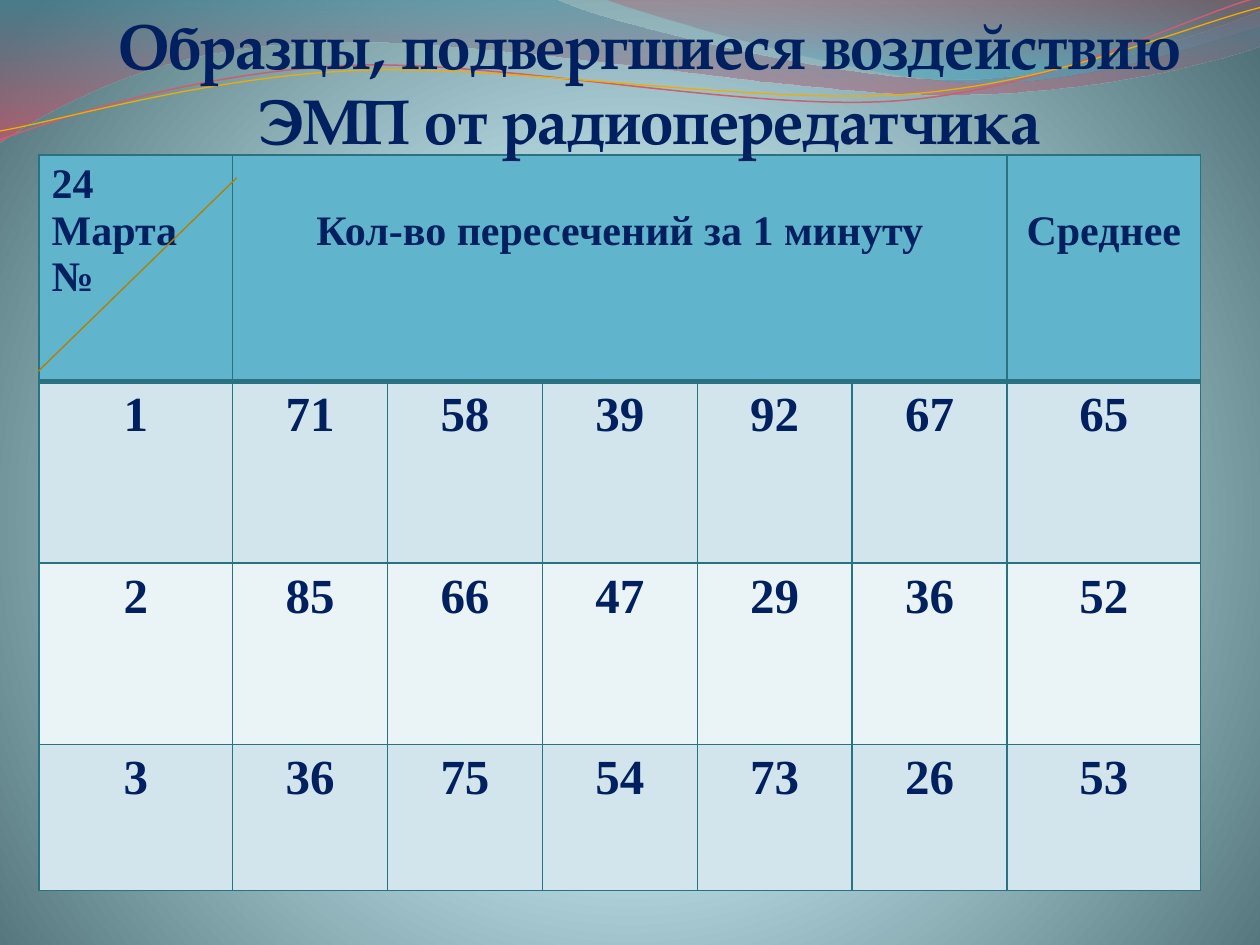
from dataclasses import dataclass

from lxml import etree
from pptx import Presentation
from pptx.dml.color import RGBColor
from pptx.enum.shapes import MSO_CONNECTOR
from pptx.enum.text import MSO_ANCHOR, MSO_AUTO_SIZE, PP_ALIGN
from pptx.oxml import parse_xml
from pptx.oxml.ns import nsdecls, qn
from pptx.util import Emu, Inches, Pt

CENTER, LEFT = PP_ALIGN.CENTER, PP_ALIGN.LEFT
TOP = MSO_ANCHOR.TOP
FIT_SHAPE = MSO_AUTO_SIZE.SHAPE_TO_FIT_TEXT
STRAIGHT = MSO_CONNECTOR.STRAIGHT


@dataclass(frozen=True)
class Theme:
    ink: str = "002060"
    outline: str = "3EB9DA"
    head: str = "60B5CC"
    bands: tuple = ("D2E5EC", "EAF3F6")
    border: str = "287281"
    diagonal: str = "B28000"
    title_font: str = "TeX Gyre Pagella"
    table_font: str = "Times New Roman"
    title_pt: int = 36
    head_pt: int = 24
    body_pt: int = 28


T = Theme()

# Content
TITLE = "Образцы, подвергшиеся воздействию ЭМП от радиопередатчика"
CORNER = ["24", "Марта", "№"]
COUNT_HEAD = "Кол-во пересечений за 1 минуту"
MEAN_HEAD = "Среднее"
SAMPLES = [
    (1, 71, 58, 39, 92, 67, 65),
    (2, 85, 66, 47, 29, 36, 52),
    (3, 36, 75, 54, 73, 26, 53),
]

# Table grid: columns are shares of the width, rows are inches
TABLE_LEFT, TABLE_TOP, TABLE_W = 0.31, 1.23, 9.22
COL_SHARES = (5, 4, 4, 4, 4, 4, 5)
ROW_HEIGHTS = (1.8, 1.44, 1.44, 1.16)
HEAD_DROP = 0.42

# Gradients: (position %, colour, opacity %)
BACKDROP = [(0, "D5F7FF", 100), (25, "D3F7FF", 100), (100, "507178", 100)]
RADIAL = ('<a:path path="circle"><a:fillToRect l="10000" t="110000" '
          'r="10000" b="100000"/></a:path>')
DOWNWARD = '<a:lin ang="5400000" scaled="0"/>'

# Waves: a pair is a straight step, six numbers are a Bezier step
WAVE_BANDS = [
    ([(0, -0.01), (4.4, -0.01), (4.76, 0.17, 6.64, 0.63, 7.58, 0.63),
      (8.53, 0.63, 9.58, 0.26, 10, 0.09), (10.01, 0.36),
      (9.83, 0.44, 8.7, 0.76, 7.46, 0.75), (6.22, 0.75, 3.82, 0.28, 2.57, 0.34),
      (1.29, 0.35, 0.46, 0.83, -0.01, 1.13)],
     [(0, "3F8A9F", 45), (100, "EF445B", 55)]),
    ([(4.79, -0.01), (5.09, 0.11, 6.82, 0.62, 7.69, 0.65),
      (8.56, 0.69, 9.61, 0.32, 10, 0.21), (10, 0)],
     [(0, "B84253", 30), (80, "42ABC7", 45)]),
]
WAVE_LINES = [
    ([(0, 1.11), (0.48, 0.93, 1.58, 0.57, 2.77, 0.52),
      (3.95, 0.47, 5.93, 0.89, 7.13, 0.8), (8.33, 0.71, 9.38, 0.15, 9.98, -0.02)],
     "CB5F6E", 0.85),
    ([(0, 1.04), (0.47, 0.96, 1.64, 0.61, 2.83, 0.56),
      (4.03, 0.51, 5.97, 0.83, 7.17, 0.75), (8.36, 0.67, 9.41, 0.21, 10, 0.06)],
     "F0AD00", 0.75),
]
UNITS = 100  # path units to the inch


def rgb(value):
    return RGBColor.from_string(value)


def set_gradient(fill, parent, stops, direction):
    fill.gradient()
    old = next(parent.iter(qn("a:gradFill")))
    marks = "".join(
        f'<a:gs pos="{pos * 1000}"><a:srgbClr val="{color}">'
        f'<a:alpha val="{alpha * 1000}"/></a:srgbClr></a:gs>'
        for pos, color, alpha in stops)
    old.getparent().replace(old, parse_xml(
        f'<a:gradFill {nsdecls("a")} rotWithShape="1">'
        f'<a:gsLst>{marks}</a:gsLst>{direction}</a:gradFill>'))


def add_wave(slide, steps, close):
    points = [(round(step[i] * UNITS), round(step[i + 1] * UNITS))
              for step in steps for i in range(0, len(step), 2)]
    builder = slide.shapes.build_freeform(*points[0], scale=Inches(1) / UNITS)
    builder.add_line_segments(points[1:], close=close)
    sp = builder.convert_to_shape()
    sp.shadow.inherit = False

    # Join the three points of each Bezier step into one curve
    segments = iter(list(sp._element.iter(qn("a:lnTo"))))
    for step in steps[1:]:
        group = [next(segments) for _ in range(len(step) // 2)]
        if len(group) == 3:
            curve = etree.Element(qn("a:cubicBezTo"))
            group[0].addprevious(curve)
            for segment in group:
                curve.append(segment[0])
                segment.getparent().remove(segment)
    return sp


def line_xml(tag, color, width):
    return parse_xml(
        f'<a:{tag} {nsdecls("a")} w="{Pt(width)}"><a:solidFill>'
        f'<a:srgbClr val="{color}"/></a:solidFill></a:{tag}>')


def write(tf, lines, align, font):
    for i, line in enumerate(lines):
        p = tf.paragraphs[0] if i == 0 else tf.add_paragraph()
        p.alignment = align
        r = p.add_run()
        r.text = str(line)
        for name, value in font.items():
            setattr(r.font, name, value)
        r.font.color.rgb = rgb(T.ink)


def fill_cell(cell, row, lines, align=CENTER, drop=0.05):
    is_head = row == 0
    cell.fill.solid()
    cell.fill.fore_color.rgb = rgb(T.head if is_head else T.bands[(row - 1) % 2])
    cell.margin_top = Inches(drop)
    size = T.head_pt if is_head else T.body_pt
    write(cell.text_frame, lines, align,
          {"name": T.table_font, "size": Pt(size), "bold": True})
    widths = {"lnL": 1, "lnR": 1, "lnT": 3 if row == 1 else 1,
              "lnB": 3 if is_head else 1}
    tcPr = cell._tc.get_or_add_tcPr()
    for i, (tag, width) in enumerate(widths.items()):
        tcPr.insert(i, line_xml(tag, T.border, width))


def add_table(slide):
    frame = slide.shapes.add_table(
        len(ROW_HEIGHTS), len(COL_SHARES), Inches(TABLE_LEFT), Inches(TABLE_TOP),
        Inches(TABLE_W), Inches(sum(ROW_HEIGHTS)))
    table = frame.table
    table.first_row = table.horz_banding = False
    for col, share in zip(table.columns, COL_SHARES):
        col.width = Emu(round(Inches(TABLE_W) * share / sum(COL_SHARES)))
    for row, height in zip(table.rows, ROW_HEIGHTS):
        row.height = Inches(height)

    last = len(COL_SHARES) - 1
    table.cell(0, 1).merge(table.cell(0, last - 1))
    heads = {0: (CORNER, LEFT), 1: ([COUNT_HEAD], CENTER, HEAD_DROP),
             last: ([MEAN_HEAD], CENTER, HEAD_DROP)}
    for c in range(last + 1):
        fill_cell(table.cell(0, c), 0, *heads.get(c, ([],)))
    for r, sample in enumerate(SAMPLES, 1):
        for c, value in enumerate(sample):
            fill_cell(table.cell(r, c), r, [value])


def add_title(slide):
    sp = slide.shapes.title
    slide.shapes._spTree.append(sp._element)  # bring in front of the table
    box = {"left": 0.31, "top": 0, "width": 9.69, "height": 1.31}
    for name, value in box.items():
        setattr(sp, name, Inches(value))
    tf = sp.text_frame
    tf.word_wrap, tf.auto_size, tf.vertical_anchor = True, FIT_SHAPE, TOP
    write(tf, [TITLE], CENTER,
          {"name": T.title_font, "size": Pt(T.title_pt), "bold": True})
    rPr = tf.paragraphs[0].runs[0]._r.get_or_add_rPr()
    rPr.insert(0, line_xml("ln", T.outline, 1.93))


def main():
    prs = Presentation()
    prs.slide_width, prs.slide_height = Inches(10), Inches(7.5)
    slide = prs.slides.add_slide(prs.slide_layouts[5])

    # Background and waves
    set_gradient(slide.background.fill, slide._element, BACKDROP, RADIAL)
    for steps, stops in WAVE_BANDS:
        sp = add_wave(slide, steps, True)
        set_gradient(sp.fill, sp._element, stops, DOWNWARD)
        sp.line.fill.background()
    for steps, color, width in WAVE_LINES:
        sp = add_wave(slide, steps, False)
        sp.fill.background()
        sp.line.color.rgb, sp.line.width = rgb(color), Pt(width)

    # Table, title and the diagonal of the corner cell
    add_table(slide)
    add_title(slide)
    diagonal = slide.shapes.add_connector(
        STRAIGHT, Inches(1.88), Inches(1.41), Inches(0.3), Inches(2.95))
    diagonal.line.color.rgb, diagonal.line.width = rgb(T.diagonal), Pt(0.75)
    etree.SubElement(diagonal._element.spPr, qn("a:effectLst"))

    prs.save("out.pptx")


if __name__ == "__main__":
    main()
